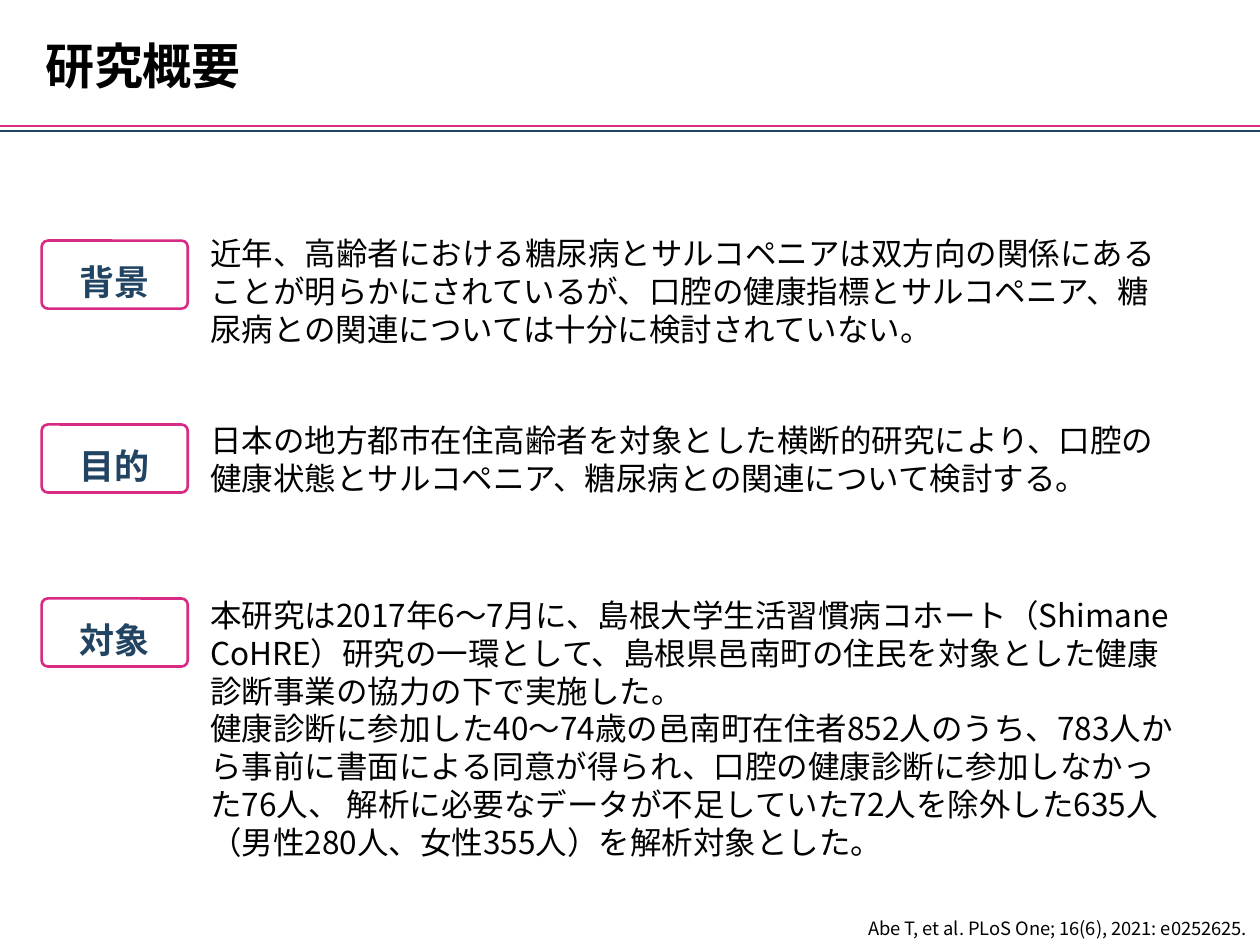
from lxml.etree import SubElement
from pptx import Presentation
from pptx.dml.color import RGBColor
from pptx.enum.lang import MSO_LANGUAGE_ID as Lang
from pptx.enum.shapes import MSO_CONNECTOR as Connector, MSO_SHAPE as Shape
from pptx.enum.text import MSO_ANCHOR as Anchor, MSO_AUTO_SIZE as AutoSize, PP_ALIGN as Align
from pptx.oxml.ns import qn
from pptx.util import Pt

PINK = RGBColor(0xD8, 0x2B, 0x83)
NAVY = RGBColor(0x22, 0x44, 0x63)
BLACK = RGBColor(0, 0, 0)
FONT = "Noto Sans CJK JP"
WIDTH, HEIGHT = 720, 540

SECTIONS = [
    ("背景", 137.5, 130.3, 73,
     "近年、高齢者における糖尿病とサルコペニアは双方向の関係にあることが明らかにされているが、"
     "口腔の健康指標とサルコペニア、糖尿病との関連については十分に検討されていない。"),
    ("目的", 242.6, 236.9, 51,
     "日本の地方都市在住高齢者を対象とした横断的研究により、口腔の健康状態とサルコペニア、"
     "糖尿病との関連について検討する。"),
    ("対象", 342, 337, 160,
     "本研究は2017年6～7月に、島根大学生活習慣病コホート（Shimane CoHRE）研究の一環として、"
     "島根県邑南町の住民を対象とした健康診断事業の協力の下で実施した。\n"
     "健康診断に参加した40～74歳の邑南町在住者852人のうち、783人から事前に書面による同意が得られ、"
     "口腔の健康診断に参加しなかった76人、 解析に必要なデータが不足していた72人を除外した635人"
     "（男性280人、女性355人）を解析対象とした。"),
]


def add_text(shapes, text, left, top, width, height, size, color=BLACK, bold=False,
             align=Align.LEFT, anchor=Anchor.TOP, spacing=None, wrap=True):
    frame = shapes.add_textbox(Pt(left), Pt(top), Pt(width), Pt(height)).text_frame
    frame.text = text
    frame.word_wrap = wrap
    frame.auto_size = AutoSize.SHAPE_TO_FIT_TEXT
    frame.vertical_anchor = anchor
    for paragraph in frame.paragraphs:
        paragraph.alignment = align
        paragraph.line_spacing = spacing
        for run in paragraph.runs:
            font = run.font
            font.size = Pt(size)
            font.bold = bold
            font.color.rgb = color
            font.name = FONT
            font.language_id = Lang.JAPANESE
            SubElement(font._element, qn("a:ea"), typeface=FONT)


def add_rule(shapes, top, color):
    rule = shapes.add_connector(Connector.STRAIGHT, Pt(0), Pt(top), Pt(WIDTH), Pt(top))
    rule.line.color.rgb = color
    rule.line.width = Pt(1.5)
    SubElement(rule._element.spPr, qn("a:effectLst"))


def add_header(shapes, title, left, top, width, height):
    add_rule(shapes, top + 58.3, NAVY)
    add_rule(shapes, top + 55.4, PINK)
    add_text(shapes, title, left, top, width, height, 28, bold=True,
             anchor=Anchor.MIDDLE, wrap=False)


def add_badge(shapes, label, left, top, width, height):
    badge = shapes.add_group_shape().shapes
    frame = badge.add_shape(Shape.ROUNDED_RECTANGLE, Pt(left), Pt(top), Pt(width), Pt(height))
    frame.adjustments[0] = 0.093
    frame.shadow.inherit = False
    frame.fill.background()
    frame.line.color.rgb = PINK
    frame.line.width = Pt(1.5)
    add_text(badge, label, left + 13.7, top + 2.9, width - 27.4, height - 5.8, 20,
             NAVY, bold=True, align=Align.CENTER, spacing=1.2)


def add_section(shapes, label, badge_top, body_top, body_height, body, left, width):
    indent = 89.3
    add_badge(shapes, label, left, badge_top, 83.5, 38.9)
    add_text(shapes, body, left + indent, body_top, width - indent, body_height, 18)


def add_citation(shapes, citation, left, top, width, height):
    add_text(shapes, citation, left, top, width, height, 10.5,
             align=Align.RIGHT, anchor=Anchor.BOTTOM)


def main():
    deck = Presentation()
    deck.slide_width, deck.slide_height = Pt(WIDTH), Pt(HEIGHT)
    shapes = deck.slides.add_slide(deck.slide_layouts[6]).shapes
    add_header(shapes, "研究概要", 18.7, 16.6, 127.4, 41)
    for section in SECTIONS:
        add_section(shapes, *section, left=23.8, width=653.7)
    add_citation(shapes, "Abe T, et al. PLoS One; 16(6), 2021: e0252625.",
                 WIDTH / 2, HEIGHT - 20, WIDTH / 2, 20)
    deck.save("out.pptx")


if __name__ == "__main__":
    main()
